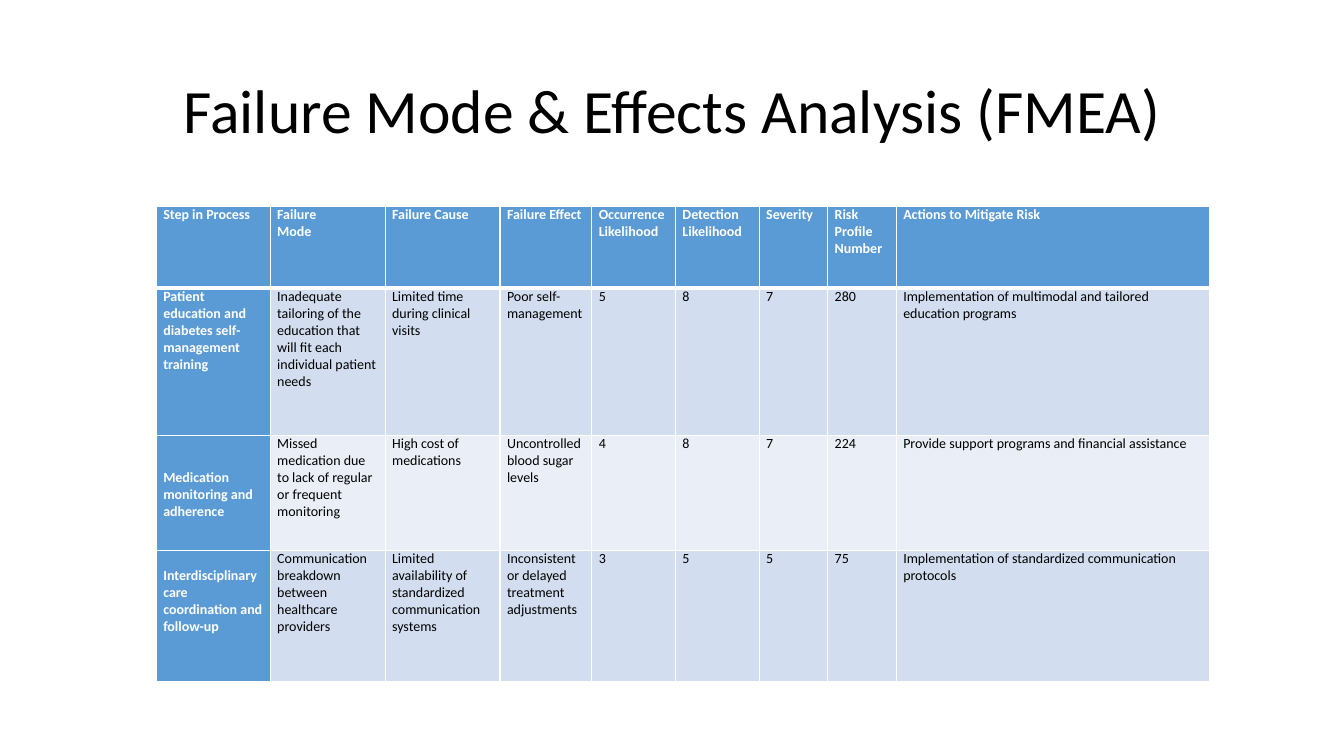
from lxml.etree import SubElement
from pptx import Presentation
from pptx.dml.color import RGBColor
from pptx.enum.text import MSO_ANCHOR, PP_ALIGN
from pptx.oxml.ns import qn
from pptx.util import Inches, Pt

FONT = "Calibri"
WHITE, BLACK, BLUE = "FFFFFF", "000000", "5B9BD5"
BANDS = ["D2DEEF", "EAEFF7"]
LINE_HEIGHT = 0.17

COLUMN_WIDTHS = [1.13, 1.14, 1.14, 0.91, 0.83, 0.83, 0.68, 0.68, 3.11]
ROW_HEIGHTS = [0.81, 1.46, 1.14, 1.3]
# Lines by which the step name is lowered in each row
STEP_OFFSETS = [0, 0, 2, 1]

ROWS = [
    ["Step in Process", "Failure\nMode", "Failure Cause", "Failure Effect",
     "Occurrence Likelihood", "Detection\nLikelihood", "Severity",
     "Risk Profile Number", "Actions to Mitigate Risk"],
    ["Patient education and diabetes self-management training",
     "Inadequate tailoring of the education that will fit each individual patient needs",
     "Limited time during clinical visits", "Poor self-management",
     "5", "8", "7", "280",
     "Implementation of multimodal and tailored education programs"],
    ["Medication monitoring and adherence",
     "Missed medication due to lack of regular or frequent monitoring",
     "High cost of medications", "Uncontrolled blood sugar levels",
     "4", "8", "7", "224",
     "Provide support programs and financial assistance"],
    ["Interdisciplinary care coordination and follow-up",
     "Communication breakdown between healthcare providers",
     "Limited availability of standardized communication systems",
     "Inconsistent or delayed treatment adjustments",
     "3", "5", "5", "75",
     "Implementation of standardized communication protocols"],
]


def color(value):
    return RGBColor.from_string(value)


def format_text(frame, size, text_color, bold=False):
    for para in frame.paragraphs:
        for span in para.runs:
            span.font.name = FONT
            span.font.size = Pt(size)
            span.font.bold = bold
            span.font.color.rgb = color(text_color)


def add_title(page, text):
    box = page.shapes.add_textbox(Inches(0.92), Inches(0.4), Inches(11.5), Inches(1.45))
    frame = box.text_frame
    frame.word_wrap = True
    frame.vertical_anchor = MSO_ANCHOR.MIDDLE
    frame.text = text
    frame.paragraphs[0].alignment = PP_ALIGN.CENTER
    frame.paragraphs[0].line_spacing = 0.9
    format_text(frame, 44, BLACK)


def set_borders(cell, top, bottom):
    properties = cell._tc.get_or_add_tcPr()
    for side, width in (("L", 1), ("R", 1), ("T", top), ("B", bottom)):
        line = SubElement(properties, qn(f"a:ln{side}"), w=str(Pt(width)))
        fill = SubElement(line, qn("a:solidFill"))
        SubElement(fill, qn("a:srgbClr"), val=WHITE)


def fill_cell(cell, text, row, column):
    is_heading = row == 0 or column == 0
    # Thick line between the header and the body
    set_borders(cell, top=3 if row == 1 else 1, bottom=3 if row == 0 else 1)
    cell.fill.solid()
    cell.fill.fore_color.rgb = color(BLUE if is_heading else BANDS[(row - 1) % 2])
    cell.margin_left = cell.margin_right = Inches(0.07)
    cell.margin_top = Inches(LINE_HEIGHT * STEP_OFFSETS[row] if column == 0 else 0)
    cell.margin_bottom = 0
    cell.text_frame.text = text
    format_text(cell.text_frame, 10, WHITE if is_heading else BLACK, is_heading)


def add_risk_table(page):
    frame = page.shapes.add_table(
        len(ROWS), len(COLUMN_WIDTHS), Inches(1.55), Inches(2.05),
        Inches(sum(COLUMN_WIDTHS)), Inches(sum(ROW_HEIGHTS)))
    table = frame.table
    table.first_col = True
    for column, width in zip(table.columns, COLUMN_WIDTHS):
        column.width = Inches(width)
    for row, height in zip(table.rows, ROW_HEIGHTS):
        row.height = Inches(height)
    for row, texts in enumerate(ROWS):
        for column, text in enumerate(texts):
            fill_cell(table.cell(row, column), text, row, column)


def main():
    deck = Presentation()
    deck.slide_width = Inches(13.33)
    deck.slide_height = Inches(7.5)
    page = deck.slides.add_slide(deck.slide_layouts[6])
    add_title(page, "Failure Mode & Effects Analysis (FMEA)")
    add_risk_table(page)
    deck.save("out.pptx")


if __name__ == "__main__":
    main()
